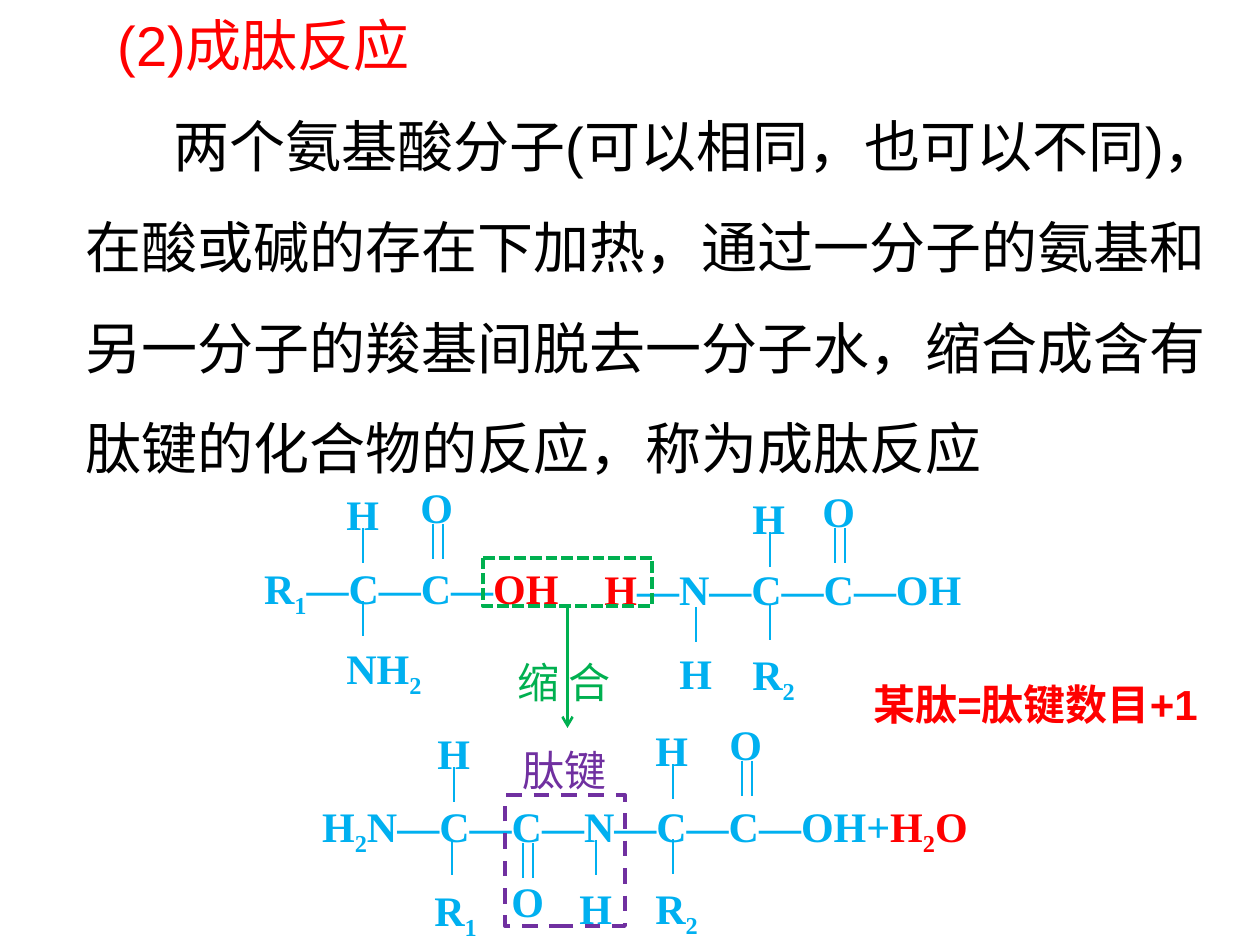
from itertools import groupby

from lxml.etree import SubElement
from pptx import Presentation
from pptx.dml.color import RGBColor
from pptx.enum.dml import MSO_LINE_DASH_STYLE as Dash
from pptx.enum.shapes import MSO_CONNECTOR as Connector, MSO_SHAPE as Shape
from pptx.enum.text import MSO_AUTO_SIZE as AutoSize, PP_ALIGN as Align
from pptx.oxml.ns import qn
from pptx.util import Emu, Pt

PX = 914400 / 126
COLORS = {"red": "FF0000", "black": "000000", "blue": "00B0F0",
          "green": "00B050", "purple": "7030A0", "white": "FFFFFF"}
SERIF, SANS, CJK = "Times New Roman", "Arial", "Noto Sans CJK SC"
BOND = 35
BOND_GAP = 10
ATOM_WIDTH = 58


def px(length):
    return Emu(round(length * PX))


def rgb(color):
    return RGBColor.from_string(COLORS[color])


def add_run(paragraph, text, color, font, size=24, bold=False, subscript=False):
    run = paragraph.add_run()
    run.text = text
    run.font.size = Pt(size)
    run.font.name = font
    run.font.bold = bold
    run.font.color.rgb = rgb(color)
    properties = run.font._element
    east_asian = SubElement(properties, qn("a:ea"))
    east_asian.set("typeface", SERIF if font == SERIF else CJK)
    if subscript:
        properties.set("baseline", "-25000")


def add_text(shapes, box, spacing, wrap=False, align=Align.LEFT):
    """Add an empty text box and return its first paragraph."""
    frame = shapes.add_textbox(*map(px, box)).text_frame
    frame.word_wrap = wrap
    frame.auto_size = AutoSize.SHAPE_TO_FIT_TEXT
    paragraph = frame.paragraphs[0]
    paragraph.alignment = align
    paragraph.line_spacing = spacing
    return paragraph


def add_formula(shapes, box, parts, align=Align.LEFT, spacing=1.3):
    """Write (text, color) parts, with every digit as a subscript."""
    paragraph = add_text(shapes, box, spacing, align=align)
    for text, color in parts:
        for is_digit, letters in groupby(text, str.isdigit):
            add_run(paragraph, "".join(letters), color, SERIF,
                    bold=True, subscript=is_digit)


def add_line(shapes, start, end, color):
    line = shapes.add_connector(Connector.STRAIGHT, *map(px, (*start, *end)))
    line.line.color.rgb = rgb(color)
    line.line.width = Pt(1.5)
    SubElement(line._element.spPr, qn("a:effectLst"))
    return line


def add_dashed_frame(shapes, kind, box, color, dash):
    frame = shapes.add_shape(kind, *map(px, box))
    frame.shadow.inherit = False
    frame.fill.background()
    frame.line.color.rgb = rgb(color)
    frame.line.width = Pt(2.25)
    frame.line.dash_style = dash
    return frame


def add_label(shapes, box, text, color):
    paragraph = add_text(shapes, box, Pt(37.4))
    add_run(paragraph, text, color, CJK)


def add_molecule(slide, box, chain_top, chain, align, atoms, bonds, double_bond_starts):
    """Draw a main chain with side atoms and vertical bonds, all relative to box."""
    left, top, width, height = box
    shapes = slide.shapes.add_group_shape().shapes
    add_formula(shapes, (left, top + chain_top, width, height), chain, align)
    for x, y, text in atoms:
        spacing = 1.0 if text == "O" else 1.3
        atom_width = ATOM_WIDTH if len(text) == 1 else 71 if len(text) == 2 else 103
        atom_height = 63 if text == "O" else 79 if text == "R2" else 72
        add_formula(shapes, (left + x, top + y, atom_width, atom_height),
                    [(text, "blue")], spacing=spacing)
    pairs = [(x + shift, y) for x, y in double_bond_starts for shift in (0, BOND_GAP)]
    for x, y in bonds + pairs:
        add_line(shapes, (left + x, top + y + BOND), (left + x, top + y), "blue")


def add_definition(slide, box):
    heading = add_text(slide.shapes, box, Pt(57.6), wrap=True)
    body = heading._parent.add_paragraph()
    body.line_spacing = heading.line_spacing
    heading._parent.auto_size = AutoSize.NONE
    for paragraph, indent, text, color in (
            (heading, 32, "(2)成肽反应", "red"),
            (body, 88, "两个氨基酸分子(可以相同，也可以不同)，在酸或碱的存在下加热，"
             "通过一分子的氨基和另一分子的羧基间脱去一分子水，"
             "缩合成含有肽键的化合物的反应，称为成肽反应", "black")):
        paragraph._p.get_or_add_pPr().set("indent", str(px(indent)))
        add_run(paragraph, text, color, SANS, size=32)


def add_condensation(slide, box):
    """Frame the leaving water and point down to the product."""
    left, top, width, height = box
    shapes = slide.shapes.add_group_shape().shapes
    water = add_dashed_frame(shapes, Shape.FLOWCHART_PROCESS, box,
                             "green", Dash.SQUARE_DOT)
    middle = left + width / 2
    arrow = add_line(shapes, (middle, top + height), (middle, top + 170), "green")
    arrow.begin_connect(water, 2)
    SubElement(arrow.line._get_or_add_ln(), qn("a:tailEnd")).set("type", "arrow")
    add_label(shapes, (left + 22, top + 77, 123, 72), "缩 合", "green")


def add_peptide_bond(slide, box):
    left, top = box[:2]
    shapes = slide.shapes.add_group_shape().shapes
    add_dashed_frame(shapes, Shape.RECTANGLE, box, "purple", Dash.DASH)
    add_label(shapes, (left + 5, top - 72, 111, 72), "肽键", "purple")


def add_rule(slide, box):
    rule = slide.shapes.add_shape(Shape.RECTANGLE, *map(px, box))
    rule.shadow.inherit = False
    rule.fill.solid()
    rule.fill.fore_color.rgb = rgb("white")
    rule.line.fill.background()
    frame = rule.text_frame
    frame.word_wrap = True
    frame.auto_size = AutoSize.SHAPE_TO_FIT_TEXT
    paragraph = frame.paragraphs[0]
    paragraph.alignment = Align.LEFT
    paragraph.line_spacing = Pt(29)
    add_run(paragraph, "某肽=肽键数目+1", "red", SANS, bold=True)


def main():
    deck = Presentation()
    deck.slide_width, deck.slide_height = px(1260), px(945)
    slide = deck.slides.add_slide(deck.slide_layouts[6])

    add_definition(slide, (73, -29, 1168, 722))
    add_molecule(slide, (246, 467, 325, 79), 72,
                 [("R1—C—C—", "blue"), ("OH", "red")], Align.RIGHT,
                 atoms=[(162, 8, "O"), (88, 0, "H"), (88, 152, "NH2")],
                 bonds=[(117, 61), (117, 134)],
                 double_bond_starts=[(187, 57)])
    add_molecule(slide, (592, 471, 386, 79), 71,
                 [("H", "red"), ("—N—C—C—OH", "blue")], Align.LEFT,
                 atoms=[(218, 8, "O"), (148, 0, "H"), (148, 154, "R2"), (75, 155, "H")],
                 bonds=[(178, 61), (178, 134), (104, 136)],
                 double_bond_starts=[(243, 57)])
    add_condensation(slide, (483, 558, 169, 48))
    add_molecule(slide, (304, 703, 682, 72), 74,
                 [("H2N—C—C—N—C—C—OH+", "blue"), ("H2O", "red")], Align.CENTER,
                 atoms=[(195, 166, "O"), (339, 0, "H"), (339, 156, "R2"),
                        (263, 158, "H"), (121, 3, "H"), (118, 158, "R1"),
                        (413, 9, "O")],
                 bonds=[(369, 61), (369, 136), (292, 137), (150, 64), (148, 137)],
                 double_bond_starts=[(219, 140), (438, 58)])
    add_peptide_bond(slide, (505, 795, 120, 131))
    add_rule(slide, (861, 672, 365, 63))

    deck.save("out.pptx")


if __name__ == "__main__":
    main()
